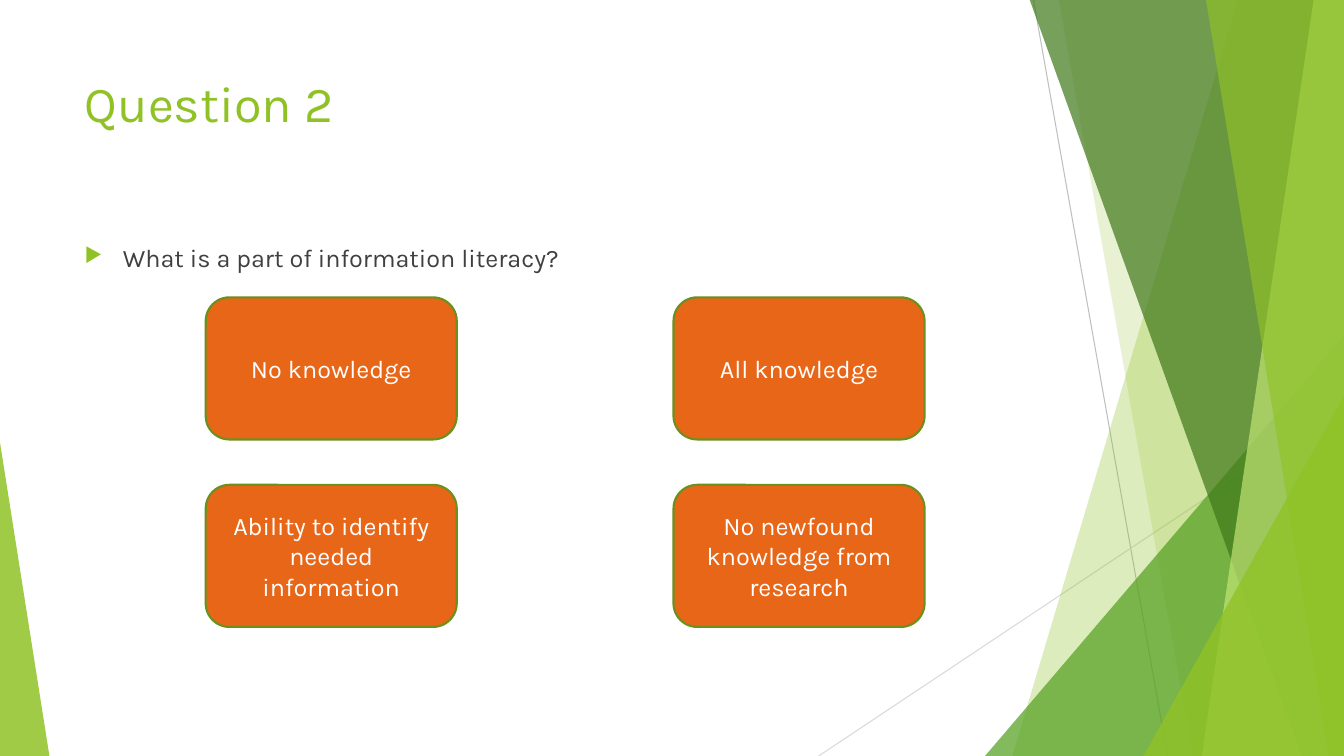
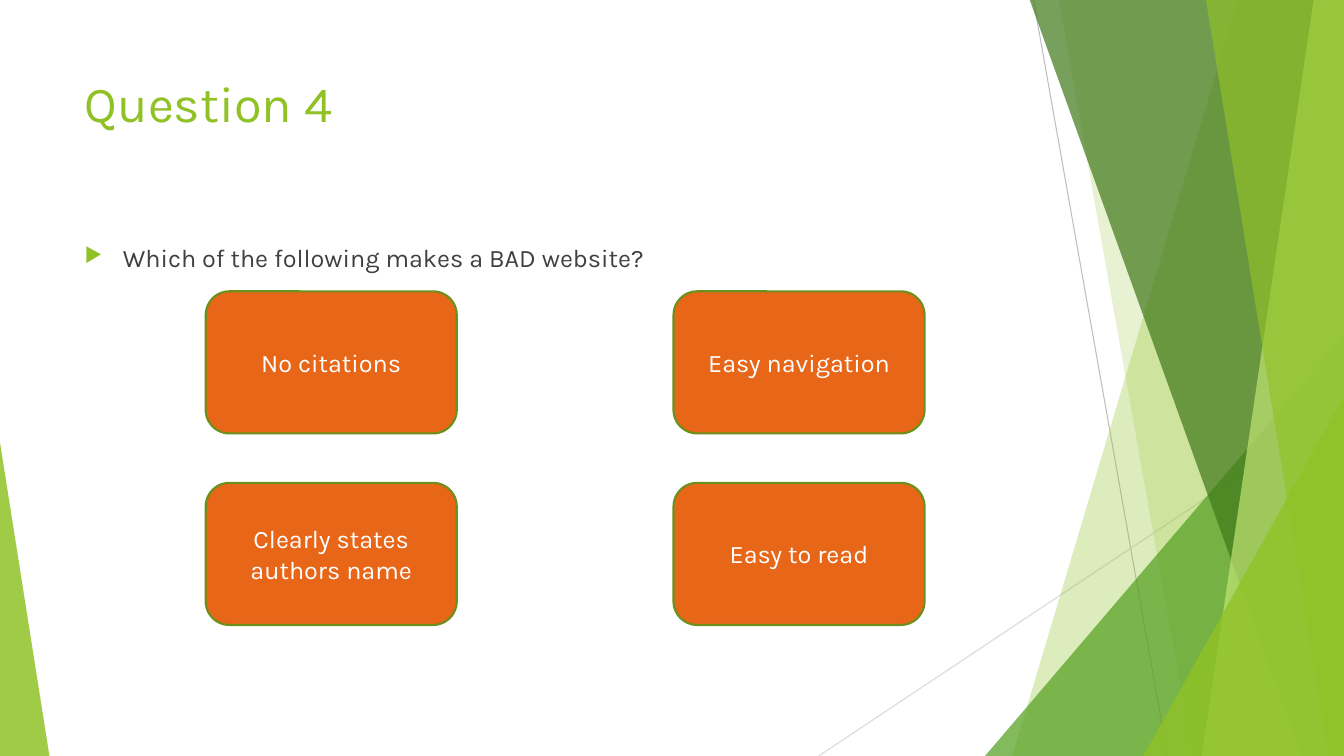
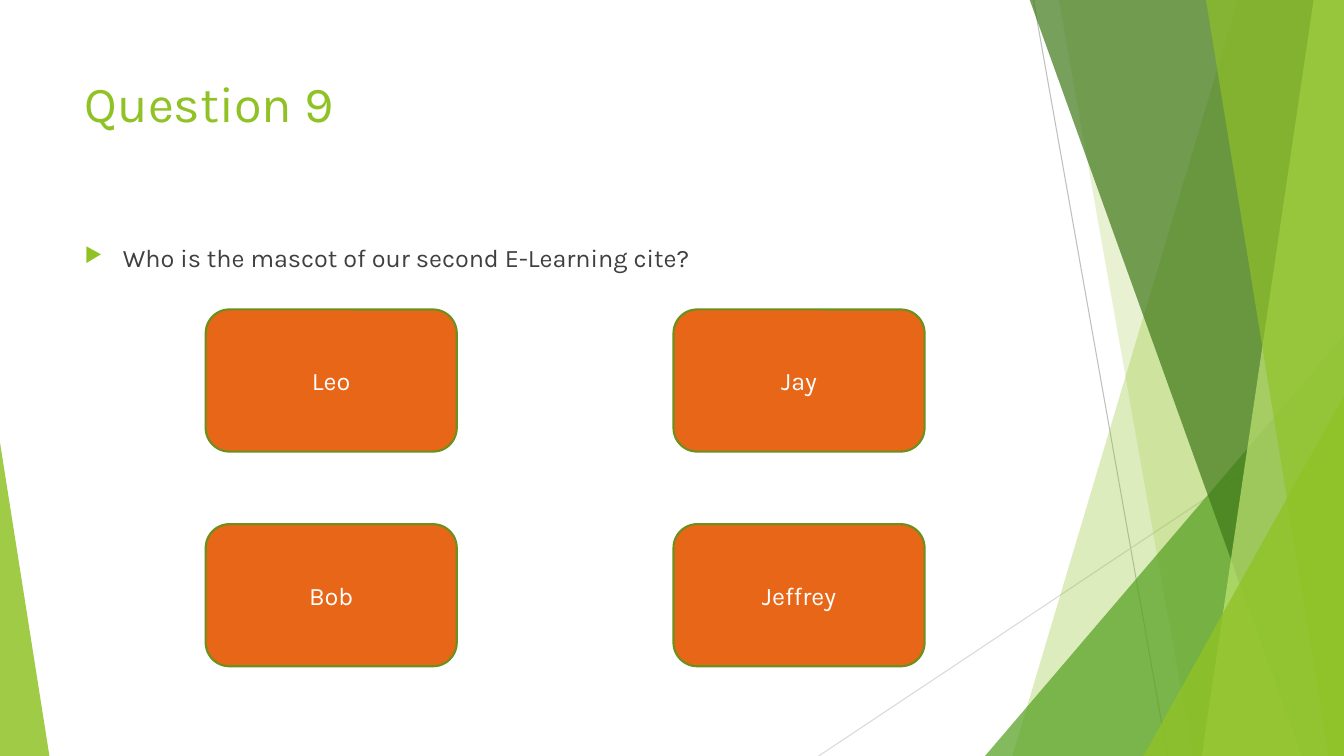
from lxml import etree
from pptx import Presentation
from pptx.dml.color import RGBColor
from pptx.enum.shapes import MSO_CONNECTOR, MSO_SHAPE
from pptx.enum.text import MSO_ANCHOR, PP_ALIGN
from pptx.oxml.ns import qn
from pptx.util import Inches, Pt

ROUND = MSO_SHAPE.ROUNDED_RECTANGLE
PEAK = MSO_SHAPE.ISOSCELES_TRIANGLE
LINE = MSO_CONNECTOR.STRAIGHT
TOP, MIDDLE = MSO_ANCHOR.TOP, MSO_ANCHOR.MIDDLE
LEFT, CENTER = PP_ALIGN.LEFT, PP_ALIGN.CENTER

FONT = "Karla"
GREEN, LEAF, PINE, LIME = "90C226", "54A021", "3F7819", "C0E474"
ORANGE, OLIVE, GRAY, WHITE = "E76618", "6B901C", "404040", "FFFFFF"
WIDE, HIGH, OVER = 13.33, 7.5, -0.01
COLS = [2.04, 6.68]
CARD = (2.49, 1.41)

RAYS = [
    (10.25, 0, 11.58, HIGH, "BFBFBF"),
    (WIDE, 4.03, 8.12, HIGH, "D9D9D9"),
]
ART = [
    ("band", (12.28, 10.04), GREEN, 30),
    ("band", (10.5, 11.83), GREEN, 20),
    ("peak", (9.77, 3.33, 3.56, 1), LEAF, 72),
    ("band", (10.21, 12.91), PINE, 70),
    ("band", (13.03, 11.92), LIME, 70),
    ("band", (11.96, 13.18), GREEN, 65),
    ("peak", (11.34, 3.93, 1.99, 1), GREEN, 80),
    ("peak", (0, 4.39, 0.49, 0), GREEN, 85),
]
QUIZ = [
    ("Question 2", "What is a part of information literacy?", (2.95, 4.81),
     ["No knowledge", "All knowledge",
      "Ability to identify needed information",
      "No newfound knowledge from research"]),
    ("Question 4", "Which of the following makes a BAD website?", (2.89, 4.79),
     ["No citations", "Easy navigation",
      "Clearly states authors name", "Easy to read"]),
    ("Question 9", "Who is the mascot of our second E-Learning cite?", (3.07, 5.2),
     ["Leo", "Jay", "Bob", "Jeffrey"]),
]


def color(code):
    return RGBColor.from_string(code)


def write(shape, text, size, code, align, anchor):
    frame = shape.text_frame
    frame.word_wrap = True
    frame.vertical_anchor = anchor
    para = frame.paragraphs[0]
    para.alignment = align
    run = para.add_run()
    run.text = text
    run.font.name = FONT
    run.font.size = Pt(size)
    run.font.color.rgb = color(code)
    return para


deck = Presentation()
deck.slide_width, deck.slide_height = Inches(WIDE), Inches(HIGH)
layout = deck.slide_layouts[5]
for holder in list(layout.placeholders)[1:]:
    layout.shapes.element.remove(holder.element)

pages = [deck.slides.add_slide(layout) for _ in QUIZ]
shapes = pages[0].shapes
decor = []

for x1, y1, x2, y2, code in RAYS:
    ray = shapes.add_connector(LINE, Inches(x1), Inches(y1), Inches(x2), Inches(y2))
    ray.line.color.rgb = color(code)
    ray.line.width = Pt(0.75)
    etree.SubElement(ray.element.spPr, qn("a:effectLst"))
    decor.append(ray)

for kind, place, code, alpha in ART:
    if kind == "band":
        head, foot = place
        path = shapes.build_freeform(Inches(head), Inches(OVER))
        ends = [(WIDE, OVER), (WIDE, HIGH), (foot, HIGH)]
        path.add_line_segments([(Inches(x), Inches(y)) for x, y in ends])
        piece = path.convert_to_shape()
    else:
        x, y, width, tip = place
        piece = shapes.add_shape(
            PEAK, Inches(x), Inches(y), Inches(width), Inches(HIGH - y))
        piece.adjustments[0] = tip
    piece.shadow.inherit = False
    piece.fill.solid()
    piece.fill.fore_color.rgb = color(code)
    piece.line.fill.background()
    tint = piece.element.spPr.find(qn("a:solidFill")).find(qn("a:srgbClr"))
    etree.SubElement(tint, qn("a:alpha"), val=str(alpha * 1000))
    decor.append(piece)

for item in decor:
    layout.shapes.element.append(item.element)

for page, (name, query, rows, picks) in zip(pages, QUIZ):
    title = page.shapes.title
    title.left, title.top = Inches(0.74), Inches(0.67)
    title.width, title.height = Inches(9.4), Inches(1.44)
    write(title, name, 36, GREEN, LEFT, TOP)

    body = page.shapes.add_textbox(
        Inches(0.74), Inches(2.36), Inches(9.4), Inches(4.24))
    para = write(body, query, 18, GRAY, LEFT, TOP)
    props = para._p.get_or_add_pPr()
    props.set("marL", str(Inches(0.38)))
    props.set("indent", str(Inches(-0.38)))
    tint = etree.SubElement(props, qn("a:buClr"))
    etree.SubElement(tint, qn("a:srgbClr"), val=GREEN)
    etree.SubElement(props, qn("a:buSzPct"), val="80000")
    etree.SubElement(props, qn("a:buChar"), char="▶")

    spots = [(x, y) for y in rows for x in COLS]
    for (x, y), pick in zip(spots, picks):
        card = page.shapes.add_shape(
            ROUND, Inches(x), Inches(y), Inches(CARD[0]), Inches(CARD[1]))
        card.shadow.inherit = False
        card.fill.solid()
        card.fill.fore_color.rgb = color(ORANGE)
        card.line.color.rgb = color(OLIVE)
        card.line.width = Pt(1.5)
        write(card, pick, 18, WHITE, CENTER, MIDDLE)

deck.save("out.pptx")
